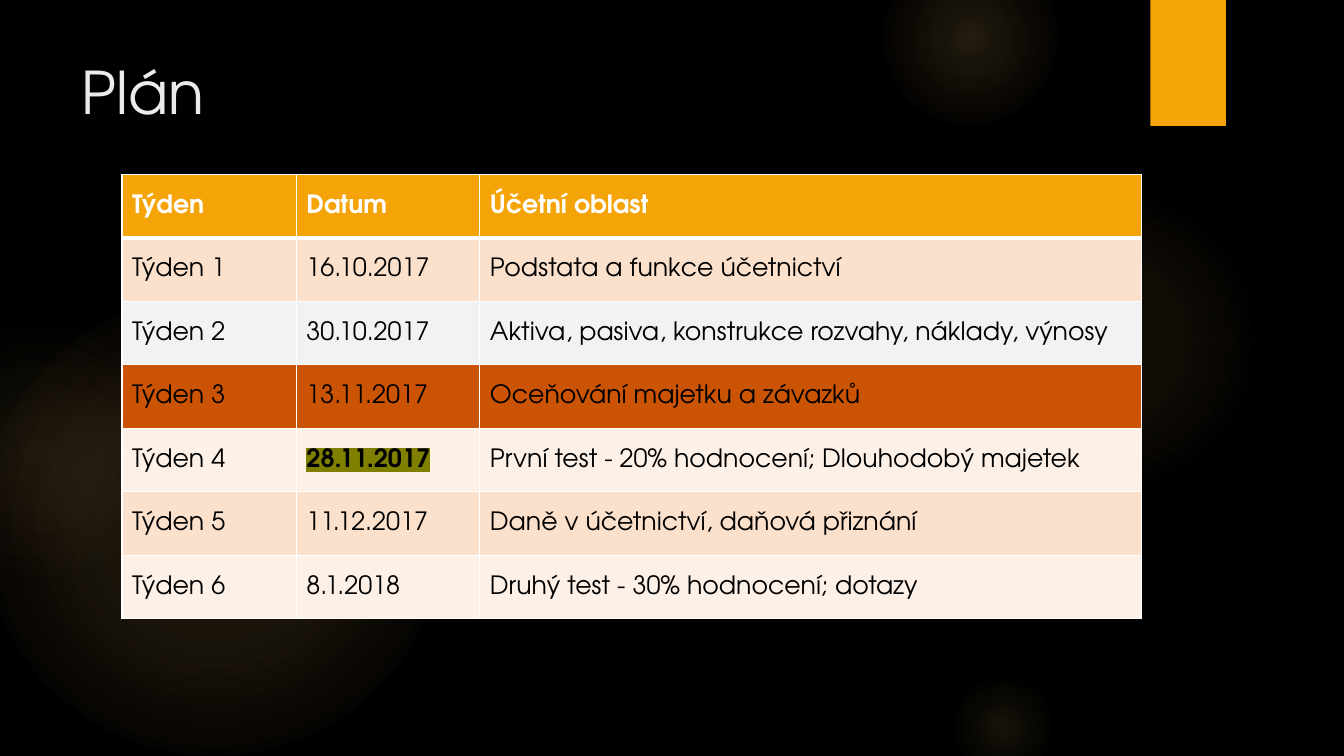
"""Build the course plan slide with its weekly schedule table."""
from dataclasses import dataclass

import lxml.etree
import pptx
import pptx.dml.color
import pptx.enum.shapes
import pptx.enum.text
import pptx.oxml
import pptx.oxml.ns
import pptx.slide
import pptx.table
import pptx.text.text
import pptx.util
from pptx.dml.color import RGBColor
from pptx.util import Inches

FONT = "TeX Gyre Adventor"
BLACK = RGBColor(0x00, 0x00, 0x00)
WHITE = RGBColor(0xFF, 0xFF, 0xFF)
TITLE_GREY = RGBColor(0xEB, 0xEB, 0xEB)
AMBER = RGBColor(0xF5, 0xA4, 0x08)
GLOW = RGBColor(0xFA, 0xC9, 0x6A)
GLOW_ROSE = RGBColor(0xF5, 0x9B, 0x74)
PEACH = RGBColor(0xFB, 0xE0, 0xCC)
CREAM = RGBColor(0xFD, 0xF0, 0xE7)
PALE_GREY = RGBColor(0xF2, 0xF2, 0xF2)
RUST = RGBColor(0xCB, 0x53, 0x04)
OLIVE = RGBColor(0x80, 0x80, 0x00)

COLUMN_WIDTHS = (1.73, 1.82, 6.56)
ROW_HEIGHT = 0.63


@dataclass(frozen=True)
class Halo:
    left: float
    top: float
    size: float
    center_alpha: int
    middle_alpha: int
    middle_stop: int
    edge_stop: int
    edge_color: RGBColor = GLOW


@dataclass(frozen=True)
class Week:
    label: str
    date: str
    topic: str
    fill: RGBColor
    color: RGBColor = BLACK
    is_header: bool = False
    is_test_date: bool = False


HALOS = (
    Halo(-0.17, 2.92, 4.58, 11, 10, 36, 75),
    Halo(-0.92, 3.17, 2.58, 8, 5, 36, 71, GLOW_ROSE),
    Halo(9.41, 1.83, 3.08, 7, 6, 36, 69),
    Halo(8.75, -0.5, 1.75, 14, 7, 36, 73),
    Halo(9.41, 6.67, 1.08, 10, 5, 31, 66),
)

WEEKS = (
    Week("Týden", "Datum", "Účetní oblast", AMBER, WHITE, is_header=True),
    Week("Týden 1", "16.10.2017", "Podstata a funkce účetnictví", PEACH),
    Week("Týden 2", "30.10.2017", "Aktiva, pasiva, konstrukce rozvahy, náklady, výnosy", PALE_GREY),
    Week("Týden 3", "13.11.2017", "Oceňování majetku a závazků", RUST),
    Week("Týden 4", "28.11.2017", "První test - 20% hodnocení; Dlouhodobý majetek", CREAM,
         is_test_date=True),
    Week("Týden 5", "11.12.2017", "Daně v účetnictví, daňová přiznání", PEACH),
    Week("Týden 6", "8.1.2018", "Druhý test - 30% hodnocení; dotazy", CREAM),
)


def style_paragraph(paragraph: pptx.text.text._Paragraph, size: float,
                    color: RGBColor, bold: bool = False) -> None:
    font = paragraph.font
    font.name = FONT
    font.size = pptx.util.Pt(size)
    font.bold = bold
    font.color.rgb = color


def draw_halo(slide: pptx.slide.Slide, halo: Halo) -> None:
    shape = slide.shapes.add_shape(
        pptx.enum.shapes.MSO_SHAPE.OVAL,
        Inches(halo.left), Inches(halo.top), Inches(halo.size), Inches(halo.size))
    shape.shadow.inherit = False
    shape.line.fill.background()
    stops = (
        (0, GLOW, halo.center_alpha),
        (halo.middle_stop, GLOW, halo.middle_alpha),
        (halo.edge_stop, halo.edge_color, 0),
    )
    stop_xml = "".join(
        f'<a:gs pos="{position * 1000}"><a:srgbClr val="{color}">'
        f'<a:alpha val="{alpha * 1000}"/></a:srgbClr></a:gs>'
        for position, color, alpha in stops)
    gradient = pptx.oxml.parse_xml(
        f'<a:gradFill {pptx.oxml.ns.nsdecls("a")}><a:gsLst>{stop_xml}</a:gsLst>'
        '<a:path path="circle"><a:fillToRect l="50000" t="50000" r="50000" b="50000"/>'
        '</a:path></a:gradFill>')
    geometry = shape._element.spPr.find(pptx.oxml.ns.qn("a:prstGeom"))
    geometry.addnext(gradient)


def draw_tab(slide: pptx.slide.Slide) -> None:
    tab = slide.shapes.add_shape(
        pptx.enum.shapes.MSO_SHAPE.RECTANGLE,
        Inches(11.41), Inches(0), Inches(0.75), Inches(1.25))
    tab.shadow.inherit = False
    tab.line.fill.background()
    tab.fill.solid()
    tab.fill.fore_color.rgb = AMBER


def draw_title(slide: pptx.slide.Slide) -> None:
    title = slide.shapes.add_textbox(Inches(0.71), Inches(0.5), Inches(10.29), Inches(1.53))
    title.text_frame.word_wrap = True
    paragraph = title.text_frame.paragraphs[0]
    paragraph.text = "Plán"
    style_paragraph(paragraph, 42, TITLE_GREY)


def set_borders(cell: pptx.table._Cell, top: float, bottom: float) -> None:
    properties = cell._tc.get_or_add_tcPr()
    for side, width in (("L", 1), ("R", 1), ("T", top), ("B", bottom)):
        properties.append(pptx.oxml.parse_xml(
            f'<a:ln{side} {pptx.oxml.ns.nsdecls("a")} w="{pptx.util.Pt(width)}">'
            f'<a:solidFill><a:srgbClr val="{WHITE}"/></a:solidFill></a:ln{side}>'))


def highlight(run: pptx.text.text._Run, color: RGBColor) -> None:
    marker = lxml.etree.SubElement(run._r.get_or_add_rPr(), pptx.oxml.ns.qn("a:highlight"))
    lxml.etree.SubElement(marker, pptx.oxml.ns.qn("a:srgbClr"), val=str(color))


def draw_schedule(slide: pptx.slide.Slide) -> None:
    frame = slide.shapes.add_table(
        len(WEEKS), len(COLUMN_WIDTHS), Inches(1.21), Inches(1.73),
        Inches(sum(COLUMN_WIDTHS)), Inches(ROW_HEIGHT * len(WEEKS)))
    table = frame.table
    for column, width in zip(table.columns, COLUMN_WIDTHS):
        column.width = Inches(width)
    for row_index, (row, week) in enumerate(zip(table.rows, WEEKS)):
        row.height = Inches(ROW_HEIGHT)
        for cell, text in zip(row.cells, (week.label, week.date, week.topic)):
            set_borders(cell, 3 if row_index == 1 else 1, 3 if week.is_header else 1)
            cell.fill.solid()
            cell.fill.fore_color.rgb = week.fill
            cell.vertical_anchor = pptx.enum.text.MSO_ANCHOR.MIDDLE
            cell.text = text
            paragraph = cell.text_frame.paragraphs[0]
            marked = week.is_test_date and text == week.date
            style_paragraph(paragraph, 18, week.color, week.is_header or marked)
            if marked:
                highlight(paragraph.runs[0], OLIVE)


def main() -> None:
    presentation = pptx.Presentation()
    presentation.slide_width = Inches(13.33)
    presentation.slide_height = Inches(7.5)
    slide = presentation.slides.add_slide(presentation.slide_layouts[6])
    slide.background.fill.solid()
    slide.background.fill.fore_color.rgb = BLACK
    for halo in HALOS:
        draw_halo(slide, halo)
    draw_tab(slide)
    draw_title(slide)
    draw_schedule(slide)
    presentation.save("out.pptx")


if __name__ == "__main__":
    main()
